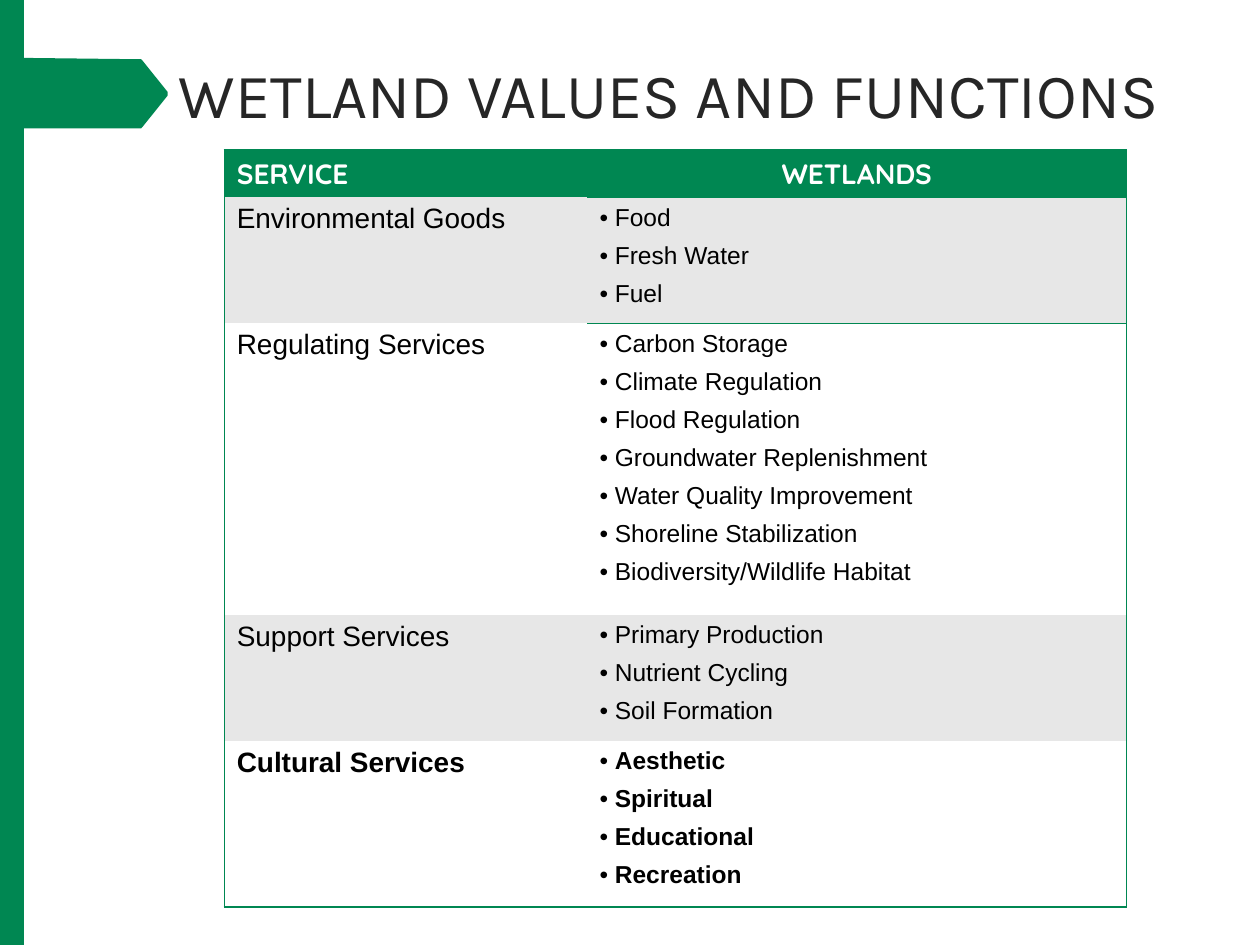
from lxml import etree
from pptx import Presentation
from pptx.dml.color import RGBColor
from pptx.enum.shapes import MSO_SHAPE
from pptx.enum.text import MSO_ANCHOR, MSO_AUTO_SIZE, PP_ALIGN
from pptx.oxml.ns import qn
from pptx.util import Inches, Pt

LEFT, CENTER = PP_ALIGN.LEFT, PP_ALIGN.CENTER
MIDDLE = MSO_ANCHOR.MIDDLE
GREEN = RGBColor(0x00, 0x87, 0x52)
GRAY = RGBColor(0xE7, 0xE7, 0xE7)
WHITE = RGBColor(0xFF, 0xFF, 0xFF)
BLACK = RGBColor(0, 0, 0)
DARK = RGBColor(0x26, 0x26, 0x26)
NO_STYLE = "{2D5ABB26-0587-4C30-8999-92F81FD0307C}"

# Content
TITLE = "WETLAND VALUES AND FUNCTIONS"
HEADS = ["SERVICE", "WETLANDS"]
ROWS = [  # service, wetland items, row height, bold
    ("Environmental Goods", ["Food", "Fresh Water", "Fuel"], 1, False),
    ("Regulating Services",
     ["Carbon Storage", "Climate Regulation", "Flood Regulation",
      "Groundwater Replenishment", "Water Quality Improvement",
      "Shoreline Stabilization", "Biodiversity/Wildlife Habitat"], 2.31, False),
    ("Support Services",
     ["Primary Production", "Nutrient Cycling", "Soil Formation"], 1, False),
    ("Cultural Services",
     ["Aesthetic", "Spiritual", "Educational", "Recreation"], 1.32, True),
]
HEAD_H = 0.37
COLS = [2.88, 4.28]
ARROW = [(0.19, 0.46), (1.04, 0.47), (1.12, 0.47), (1.13, 0.48), (1.33, 0.73),
         (1.33, 0.76), (1.13, 1.01), (1.12, 1.02), (0.19, 1.02)]


def paint(shape):
    shape.shadow.inherit = False
    shape.fill.solid()
    shape.fill.fore_color.rgb = GREEN
    shape.line.fill.background()


def style(para, face, size, color, bold=False):
    for run in para.runs:
        font = run.font
        font.name, font.size, font.bold = face, Pt(size), bold
        font.color.rgb = color


def border(cell, sides):
    props = cell._tc.get_or_add_tcPr()
    for spot, side in enumerate(s for s in "LRTB" if s in sides):
        line = etree.Element(qn("a:ln" + side), w=str(Pt(1)))
        fill = etree.SubElement(line, qn("a:solidFill"))
        etree.SubElement(fill, qn("a:srgbClr"), val=str(GREEN))
        props.insert(spot, line)


def bullet(para):
    props = para._p.get_or_add_pPr()
    hang = Inches(0.12)
    props.set("marL", str(hang))
    props.set("indent", str(-hang))
    para.space_after = Pt(6)
    etree.SubElement(props, qn("a:buFont"), typeface="Arial")
    etree.SubElement(props, qn("a:buChar"), char="•")


def shade(cell, color):
    cell.fill.solid()
    cell.fill.fore_color.rgb = color


deck = Presentation()
deck.slide_width, deck.slide_height = Inches(10), Inches(7.5)
slide = deck.slides.add_slide(deck.slide_layouts[5])
shapes = slide.shapes

# Side bar and arrow
points = [(Inches(x), Inches(y)) for x, y in ARROW]
pen = shapes.build_freeform(*points[0])
pen.add_line_segments(points[1:], close=True)
paint(pen.convert_to_shape())
paint(shapes.add_shape(MSO_SHAPE.RECTANGLE, 0, 0, Inches(0.19), Inches(7.5)))

# Title
title = shapes.title
title.left, title.top = Inches(1.32), Inches(0.39)
title.width, title.height = Inches(8.05), Inches(0.7)
frame = title.text_frame
frame.text = TITLE
frame.word_wrap, frame.auto_size = True, MSO_AUTO_SIZE.NONE
frame.vertical_anchor = MIDDLE
frame.paragraphs[0].alignment = LEFT
style(frame.paragraphs[0], "Karla", 36, DARK)

# Table grid
heights = [HEAD_H] + [row[2] for row in ROWS]
holder = shapes.add_table(len(heights), len(COLS), Inches(1.78), Inches(1.19),
                          Inches(sum(COLS)), Inches(sum(heights)))
table = holder.table
table.first_row = table.horz_banding = False
table._tbl.tblPr.find(qn("a:tableStyleId")).text = NO_STYLE
for col, width in zip(table.columns, COLS):
    col.width = Inches(width)
for row, height in zip(table.rows, heights):
    row.height = Inches(height)

# Header row
for cell, head, side in zip(table.rows[0].cells, HEADS, ["LT", "RTB"]):
    cell.text = head
    style(cell.text_frame.paragraphs[0], "Quicksand", 16, WHITE, True)
    shade(cell, GREEN)
    border(cell, side)
cell.vertical_anchor = MIDDLE
cell.text_frame.paragraphs[0].alignment = CENTER

# Service rows
for num, (name, items, _, bold) in enumerate(ROWS, 1):
    first, second = table.rows[num].cells
    first.text = name
    style(first.text_frame.paragraphs[0], "Arial", 16, BLACK, bold)
    second.text = "\n".join(items)
    for para in second.text_frame.paragraphs:
        bullet(para)
        style(para, "Arial", 14, BLACK, bold)
    last = "B" if num == len(ROWS) else ""
    for cell, side in ((first, "L"), (second, "RTB" if num == 1 else "R")):
        shade(cell, GRAY if num % 2 else WHITE)
        border(cell, side + last)

deck.save("out.pptx")
